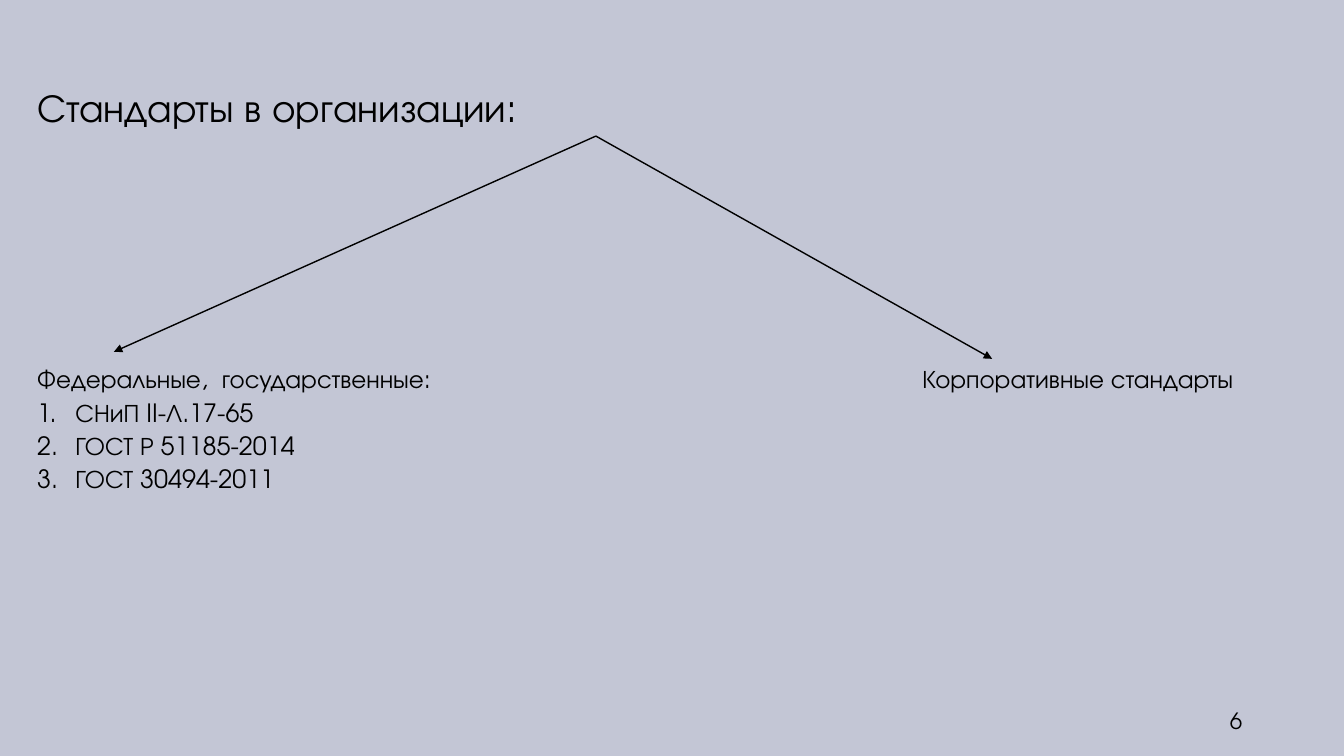
from lxml.etree import SubElement
from pptx import Presentation
from pptx.dml.color import RGBColor
from pptx.enum.shapes import MSO_CONNECTOR
from pptx.enum.text import MSO_ANCHOR, PP_ALIGN
from pptx.oxml.ns import qn
from pptx.util import Inches, Pt

COLORS = {"background": "C3C6D5", "ink": "000000"}
FONT = "TeX Gyre Adventor"
FEDERAL_STANDARDS = ["СНиП II-Л.17-65", "ГОСТ Р 51185-2014", "ГОСТ 30494-2011"]


def color(name):
    return RGBColor.from_string(COLORS[name])


def write(paragraph, text, size=18, align=PP_ALIGN.LEFT, spacing=None, number_indent=None):
    run = paragraph.add_run()
    run.text = text
    run.font.name = FONT
    run.font.size = Pt(size)
    run.font.color.rgb = color("ink")
    paragraph.alignment = align
    if spacing:
        paragraph.line_spacing = spacing
    if number_indent:
        properties = paragraph._p.get_or_add_pPr()
        properties.set("marL", str(Inches(number_indent)))
        properties.set("indent", str(-Inches(number_indent)))
        SubElement(properties, qn("a:buFont"), typeface="+mj-lt")
        SubElement(properties, qn("a:buAutoNum"), type="arabicPeriod")


def add_frame(slide, box, anchor=MSO_ANCHOR.TOP):
    frame = slide.shapes.add_textbox(*map(Inches, box)).text_frame
    frame.word_wrap = True
    frame.vertical_anchor = anchor
    return frame


def add_label(slide, box, text, anchor=MSO_ANCHOR.TOP, **text_format):
    write(add_frame(slide, box, anchor).paragraphs[0], text, **text_format)


def add_federal_standards(slide, box):
    frame = add_frame(slide, box)
    write(frame.paragraphs[0], "Федеральные,  государственные:")
    for standard in FEDERAL_STANDARDS:
        write(frame.add_paragraph(), standard, align=PP_ALIGN.JUSTIFY,
              spacing=1.1, number_indent=0.38)


def add_branch(slide, start, end):
    branch = slide.shapes.add_connector(MSO_CONNECTOR.STRAIGHT, *map(Inches, start + end))
    branch.line.color.rgb = color("ink")
    branch.line.width = Pt(1)
    SubElement(branch.line._get_or_add_ln(), qn("a:tailEnd"), type="triangle")
    SubElement(branch._element.spPr, qn("a:effectLst"))


def add_standards_slide(presentation):
    slide = presentation.slides.add_slide(presentation.slide_layouts[6])
    slide.background.fill.solid()
    slide.background.fill.fore_color.rgb = color("background")

    left, standards_top, fork = 0.27, 3.56, (5.91, 1.35)
    add_label(slide, (left, 0.78, 6.4, 0.57), "Стандарты в организации:", size=28)
    for target in [(9.84, standards_top), (1.13, 3.49)]:
        add_branch(slide, fork, target)
    add_federal_standards(slide, (left, standards_top, 5.06, 1.38))
    add_label(slide, (9.05, standards_top, 3.83, 0.4), "Корпоративные стандарты")
    add_label(slide, (9.42, 6.95, 3, 0.4), "6", anchor=MSO_ANCHOR.MIDDLE,
              size=16, align=PP_ALIGN.RIGHT)


def main():
    presentation = Presentation()
    presentation.slide_width = Inches(13.33)
    presentation.slide_height = Inches(7.5)
    add_standards_slide(presentation)
    presentation.save("out.pptx")


if __name__ == "__main__":
    main()
